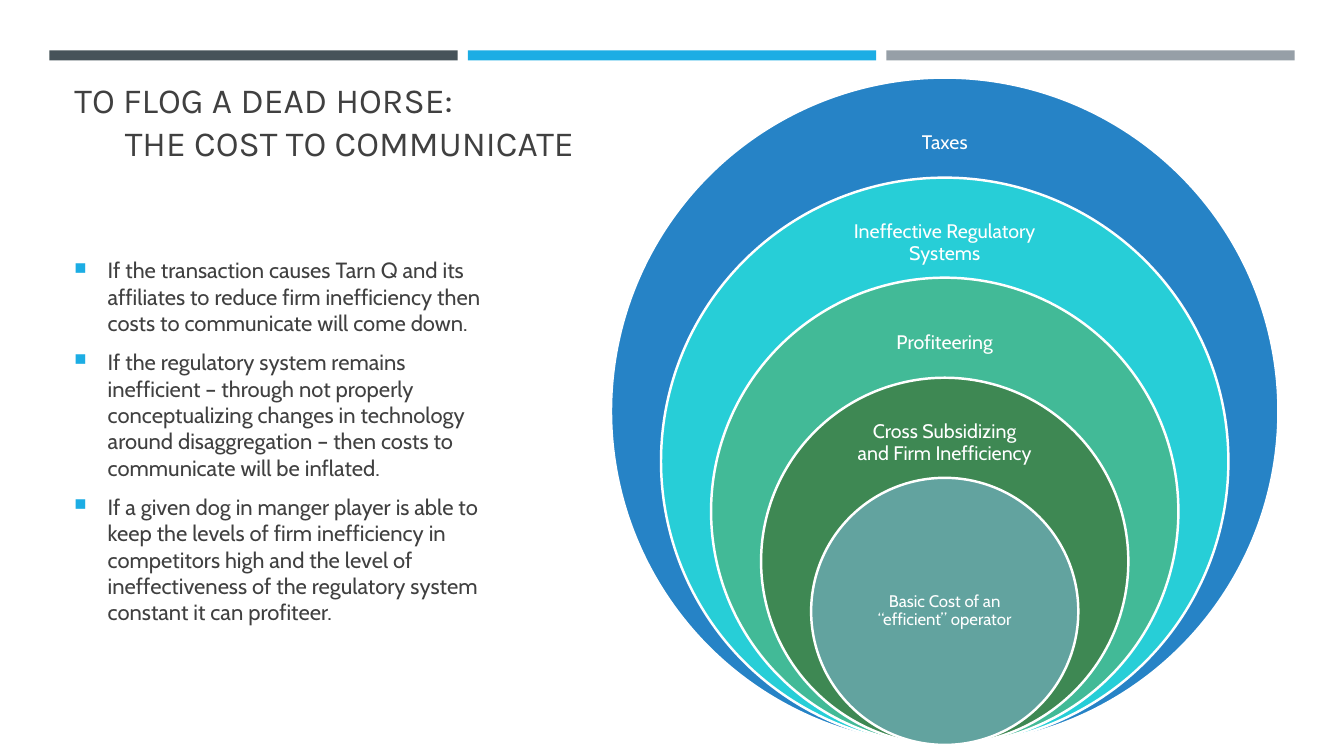
from pptx import Presentation
from pptx.dml.color import RGBColor
from pptx.enum.shapes import MSO_SHAPE as Shape
from pptx.enum.text import MSO_ANCHOR as Anchor, PP_ALIGN as Align
from pptx.oxml import parse_xml
from pptx.oxml.ns import nsdecls
from pptx.util import Inches, Pt

TEXT, ACCENT, WHITE = "404040", "1CADE4", "FFFFFF"
BARS = ["465359", ACCENT, "969FA7"]
TITLE = [("TO FLOG A DEAD HORSE:", 0), ("THE COST TO COMMUNICATE", 0.5)]
POINTS = [
    "If the transaction causes Tarn Q and its affiliates to reduce firm "
    "inefficiency then costs to communicate will come down.",
    "If the regulatory system remains inefficient – through not properly "
    "conceptualizing changes in technology around disaggregation – then costs "
    "to communicate will be inflated.",
    "If a given dog in manger player is able to keep the levels of firm "
    "inefficiency in competitors high and the level of ineffectiveness of the "
    "regulatory system constant it can profiteer.",
]
RINGS = [
    ("Taxes", "2683C6", 2.48),
    ("Ineffective Regulatory Systems", "27CED7", 2.43),
    ("Profiteering", "42BA97", 2.4),
    ("Cross Subsidizing and Firm Inefficiency", "3E8853", 1.97),
    ("Basic Cost of an “efficient” operator", "62A39F", 1.87),
]
CENTER, BASE, OUTER, INNER = 9.37, 7.39, 6.62, 2.65


def color(hex_value):
    """Turn a hex string into a colour."""
    return RGBColor.from_string(hex_value)


def add_filled(slide, preset, box, fill, outline=None):
    """Draw a flat preset shape with an optional outline."""
    figure = slide.shapes.add_shape(preset, *map(Inches, box))
    figure.shadow.inherit = False
    figure.fill.solid()
    figure.fill.fore_color.rgb = color(fill)
    if outline:
        figure.line.color.rgb = color(outline)
        figure.line.width = Pt(1.75)
    else:
        figure.line.fill.background()


def add_frame(slide, box, anchor, inset_x=0.1, inset_y=0.05):
    """Add a wrapping text box and return its text frame."""
    frame = slide.shapes.add_textbox(*map(Inches, box)).text_frame
    frame.word_wrap = True
    frame.vertical_anchor = anchor
    frame.margin_left = frame.margin_right = Inches(inset_x)
    frame.margin_top = frame.margin_bottom = Inches(inset_y)
    return frame


def add_line(frame, index, text, font, size, fill):
    """Write one styled paragraph and return it."""
    paragraph = frame.add_paragraph() if index else frame.paragraphs[0]
    paragraph.text = text
    paragraph.font.name = font
    paragraph.font.size = Pt(size)
    paragraph.font.color.rgb = color(fill)
    return paragraph


def indent(paragraph, left, first=0):
    """Set the left margin and first-line indent."""
    properties = paragraph._p.get_or_add_pPr()
    properties.set("marL", str(Inches(left)))
    properties.set("indent", str(Inches(first)))
    return properties


def add_bullet(paragraph):
    """Give a paragraph a hanging square bullet."""
    properties = indent(paragraph, 0.33, -0.33)
    for tag in (
        f'<a:buClr {nsdecls("a")}><a:srgbClr val="{ACCENT}"/></a:buClr>',
        f'<a:buSzPct {nsdecls("a")} val="75000"/>',
        f'<a:buChar {nsdecls("a")} char="■"/>',
    ):
        properties.insert_element_before(parse_xml(tag), "a:tabLst", "a:defRPr", "a:extLst")


def add_title(slide):
    """Write the two-step title."""
    frame = add_frame(slide, (0.64, 1.07, 12.06, 0.6), Anchor.BOTTOM)
    for index, (text, left) in enumerate(TITLE):
        indent(add_line(frame, index, text, "Karla", 25.2, TEXT), left)


def add_points(slide):
    """Write the bulleted argument."""
    frame = add_frame(slide, (0.64, 2.55, 4.39, 3.97), Anchor.TOP, inset_y=0)
    for index, text in enumerate(POINTS):
        point = add_line(frame, index, text, "Cabin", 15.7, TEXT)
        point.space_before, point.space_after = Pt(3), Pt(6)
        add_bullet(point)


def add_rings(slide):
    """Stack the labelled cost circles on a shared base."""
    last = len(RINGS) - 1
    step = (OUTER - INNER) / last
    for index, (label, fill, width) in enumerate(RINGS):
        size = OUTER - index * step
        top = BASE - size
        add_filled(slide, Shape.OVAL, (CENTER - size / 2, top, size, size), fill, WHITE)
        core = index == last
        offset, height, points = (0.66, 1.32, 12) if core else (0.32, 0.66, 14)
        box = (CENTER - width / 2, top + offset, width, height)
        frame = add_frame(slide, box, Anchor.MIDDLE, 0.11, 0.11)
        caption = add_line(frame, 0, label, "Cabin", points, WHITE)
        caption.alignment = Align.CENTER
        caption.line_spacing = 0.9


def main():
    """Build the slide and save it."""
    deck = Presentation()
    deck.slide_width, deck.slide_height = Inches(13.33), Inches(7.5)
    slide = deck.slides.add_slide(deck.slide_layouts[6])
    for index, fill in enumerate(BARS):
        add_filled(slide, Shape.RECTANGLE, (0.49 + index * 4.15, 0.5, 4.05, 0.1), fill)
    add_title(slide)
    add_points(slide)
    add_rings(slide)
    deck.save("out.pptx")


if __name__ == "__main__":
    main()
